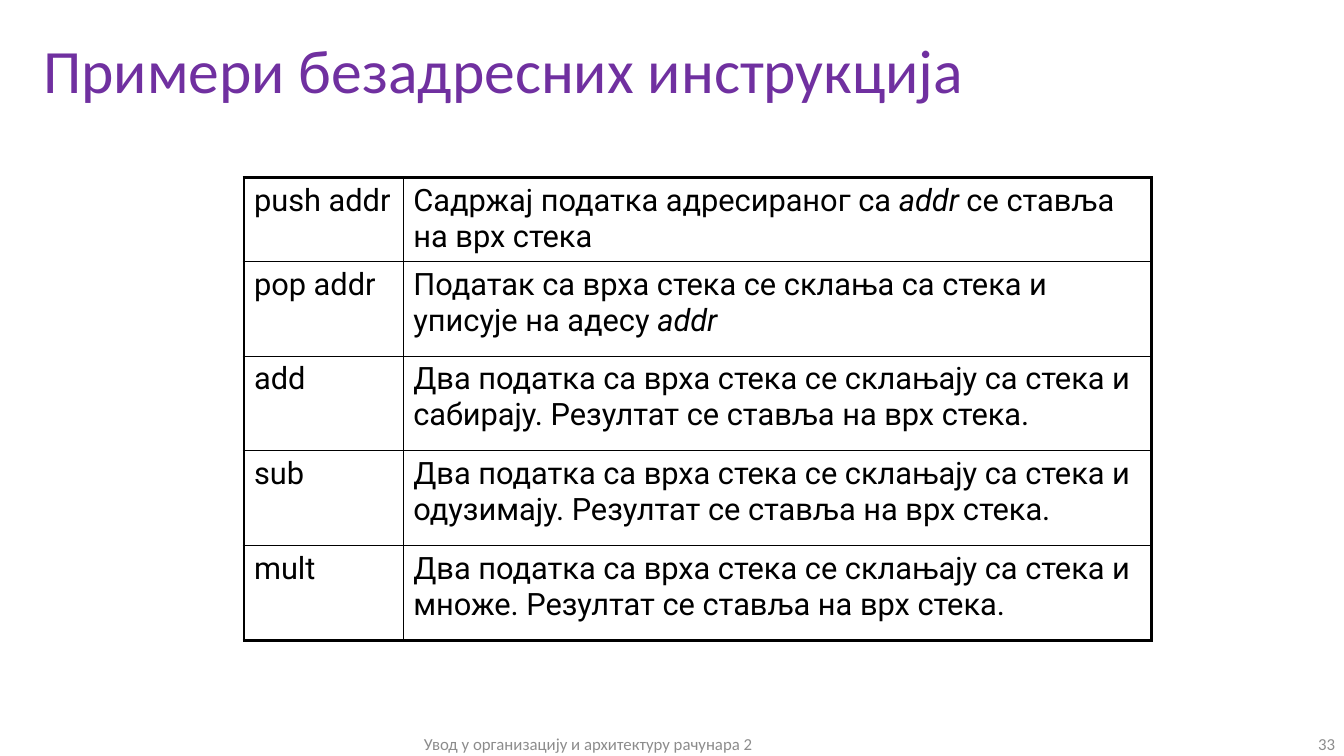
"""Build a slide that explains zero-address stack instructions."""
from dataclasses import dataclass

from lxml import etree
from pptx import Presentation
from pptx import util as u
from pptx.dml.color import RGBColor
from pptx.enum import text as t
from pptx.oxml import ns

PURPLE = RGBColor(0x70, 0x30, 0xA0)
GREY = RGBColor(0x8C, 0x8C, 0x8C)
BLACK = RGBColor(0, 0, 0)
WHITE = RGBColor(255, 255, 255)
THIN, THICK = 1, 2.25
MARK = "*"


@dataclass(frozen=True)
class Label:
    text: str
    left: float
    top: float
    width: float
    height: float
    size: float
    color: RGBColor
    align: t.PP_ALIGN
    shadow: bool = False


@dataclass(frozen=True)
class Command:
    name: str
    effect: str
    height: float = 0.94


def stack(verb: str) -> str:
    return ("Два податка са врха стека се склањају са стека и "
            f"{verb}. Резултат се ставља на врх стека.")


LABELS = [
    Label("Примери безадресних инструкција", 0.33, 0.13, 11.22, 1.2,
          44, PURPLE, t.PP_ALIGN.LEFT, True),
    Label("Увод у организацију и архитектуру рачунара 2", 0, 7.25, 11.67, 0.25,
          12, GREY, t.PP_ALIGN.CENTER),
    Label("33", 11.67, 7.25, 1.67, 0.25, 12, GREY, t.PP_ALIGN.RIGHT),
]
COMMANDS = [
    Command("push addr", "Садржај податка адресираног са *addr *се ставља на врх стека", 0.79),
    Command("pop addr", "Податак са врха стека се склања са стека и уписује на адесу *addr*"),
    Command("add", stack("сабирају")),
    Command("sub", stack("одузимају")),
    Command("mult", stack("множе")),
]
COLS = (1.58, 7.42)


def write(frame, words: str, *, size: float, color: RGBColor, font: str = "Calibri",
          align: t.PP_ALIGN = t.PP_ALIGN.LEFT, before: float = 0,
          line: float = 1, shadow: bool = False) -> None:
    """Write one paragraph, with marked parts in italics."""
    frame.word_wrap = True
    para = frame.paragraphs[0]
    para.alignment = align
    para.space_before = u.Pt(before)
    para.line_spacing = line
    for i, part in enumerate(words.split(MARK)):
        if not part:
            continue
        run = para.add_run()
        run.text = part
        run.font.name = font
        run.font.size = u.Pt(size)
        run.font.italic = i % 2 == 1
        run.font.color.rgb = color
        if shadow:
            cast(run)


def cast(run) -> None:
    """Give a run a soft shadow down and to the left."""
    fill = run.font._element.find(ns.qn("a:solidFill"))
    group = etree.Element(ns.qn("a:effectLst"))
    outer = etree.SubElement(group, ns.qn("a:outerShdw"), blurRad="38100",
                             dist="38100", dir="8100000", algn="tr")
    shade = etree.SubElement(outer, ns.qn("a:srgbClr"), val=str(BLACK))
    etree.SubElement(shade, ns.qn("a:alpha"), val="40000")
    fill.addnext(group)


def edge(cell, side: str, width: float) -> None:
    """Draw one black border of a cell."""
    props = cell._tc.get_or_add_tcPr()
    line = etree.SubElement(props, ns.qn(f"a:ln{side}"), w=str(u.Pt(width)))
    fill = etree.SubElement(line, ns.qn("a:solidFill"))
    etree.SubElement(fill, ns.qn("a:srgbClr"), val=str(BLACK))


def label(slide, item: Label) -> None:
    """Add a text box."""
    box = slide.shapes.add_textbox(u.Inches(item.left), u.Inches(item.top),
                                   u.Inches(item.width), u.Inches(item.height))
    box.text_frame.vertical_anchor = t.MSO_ANCHOR.MIDDLE
    write(box.text_frame, item.text, size=item.size, color=item.color,
          align=item.align, line=0.9 if item.shadow else 1, shadow=item.shadow)


def grid(slide, items: list[Command]) -> None:
    """Add the table of commands with a thick outer frame."""
    high = sum(item.height for item in items)
    table = slide.shapes.add_table(len(items), len(COLS), u.Inches(2.42), u.Inches(1.76),
                                   u.Inches(sum(COLS)), u.Inches(high)).table
    table.first_row = table.horz_banding = False
    for col, width in zip(table.columns, COLS):
        col.width = u.Inches(width)
    for r, item in enumerate(items):
        table.rows[r].height = u.Inches(item.height)
        for c, words in enumerate((item.name, item.effect)):
            cell = table.cell(r, c)
            write(cell.text_frame, words, size=22, color=BLACK, font="Roboto", before=4.4)
            outer = {"L": c == 0, "R": c == len(COLS) - 1,
                     "T": r == 0, "B": r == len(items) - 1}
            for side, thick in outer.items():
                edge(cell, side, THICK if thick else THIN)
            cell.fill.solid()
            cell.fill.fore_color.rgb = WHITE


def main() -> None:
    """Build and save the slide."""
    deck = Presentation()
    deck.slide_width, deck.slide_height = u.Inches(13.33), u.Inches(7.5)
    slide = deck.slides.add_slide(deck.slide_layouts[6])
    for item in LABELS:
        label(slide, item)
    grid(slide, COMMANDS)
    deck.save("out.pptx")


if __name__ == "__main__":
    main()
